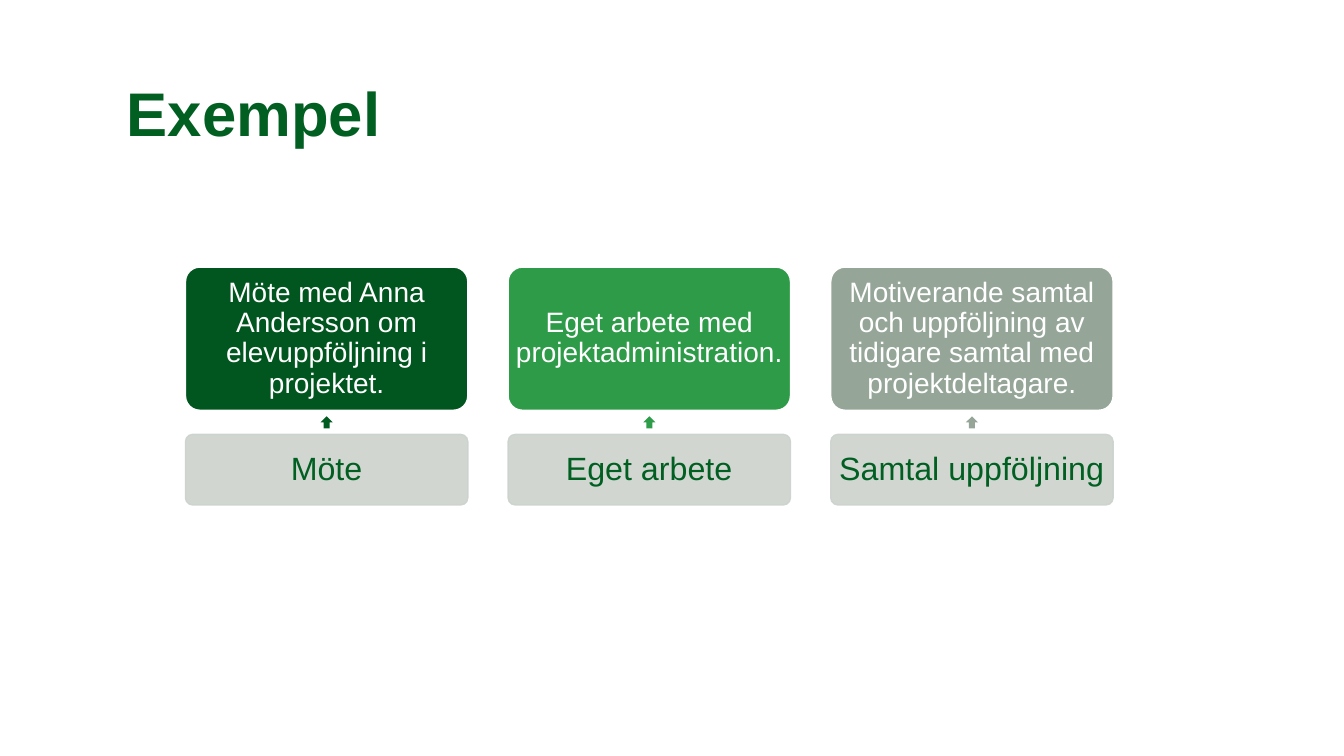
"""Build the slide "Exempel" with three activities and their categories."""
import pptx
import pptx.dml.color
import pptx.enum.shapes
import pptx.enum.text
import pptx.oxml
import pptx.oxml.ns
import pptx.util

Inches = pptx.util.Inches
Pt = pptx.util.Pt
RGBColor = pptx.dml.color.RGBColor
MSO_SHAPE = pptx.enum.shapes.MSO_SHAPE
PP_ALIGN = pptx.enum.text.PP_ALIGN
MSO_ANCHOR = pptx.enum.text.MSO_ANCHOR

GREEN = RGBColor(0x00, 0x5F, 0x21)
DARK_GREEN = RGBColor(0x00, 0x56, 0x1E)
ARROW_DARK = RGBColor(0x00, 0x5B, 0x20)
MID_GREEN = RGBColor(0x2E, 0x9B, 0x49)
ARROW_MID = RGBColor(0x2E, 0x9D, 0x4A)
GREY_GREEN = RGBColor(0x95, 0xA6, 0x98)
PALE = RGBColor(0xCC, 0xD2, 0xCD)
WHITE = RGBColor(0xFF, 0xFF, 0xFF)

HEADING = "Exempel"
ACTIVITIES = [
    ("Möte med Anna Andersson om elevuppföljning i projektet.", "Möte",
     DARK_GREEN, ARROW_DARK),
    ("Eget arbete med projektadministration.", "Eget arbete",
     MID_GREEN, ARROW_MID),
    ("Motiverande samtal och uppföljning av tidigare samtal med projektdeltagare.",
     "Samtal uppföljning", GREY_GREEN, GREY_GREEN),
]

FIRST_LEFT, PITCH, CARD_WIDTH = 1.84, 3.2, 2.8
DESCRIPTION_TOP, DESCRIPTION_HEIGHT = 2.65, 1.42
ARROW_TOP, ARROW_SIZE = 4.13, 0.12
CATEGORY_TOP, CATEGORY_HEIGHT = 4.31, 0.7
INSET = 0.03
OPACITY = 90


def write(frame, text, size, color, bold=False):
    frame.word_wrap = True
    paragraph = frame.paragraphs[0]
    paragraph.text = text
    paragraph.line_spacing = 0.9
    font = paragraph.font
    font.name, font.size, font.bold = "Arial", Pt(size), bold
    font.color.rgb = color
    return paragraph


def add_filled(slide, kind, left, top, width, height, color):
    shape = slide.shapes.add_shape(
        kind, Inches(left), Inches(top), Inches(width), Inches(height))
    shape.shadow.inherit = False
    shape.fill.solid()
    shape.fill.fore_color.rgb = color
    shape.line.fill.background()
    return shape


def add_card(slide, left, top, height, fill, border, text, size, color):
    card = add_filled(slide, MSO_SHAPE.ROUNDED_RECTANGLE,
                      left, top, CARD_WIDTH, height, fill)
    card.adjustments[0] = 0.1
    card.line.color.rgb = border
    card.line.width = Pt(1)
    frame = card.text_frame
    frame.margin_left = frame.margin_right = Inches(INSET)
    frame.margin_top = frame.margin_bottom = Inches(INSET)
    frame.vertical_anchor = MSO_ANCHOR.MIDDLE
    write(frame, text, size, color).alignment = PP_ALIGN.CENTER
    return card


def make_translucent(card):
    for color in card._element.spPr.iter(pptx.oxml.ns.qn("a:srgbClr")):
        alpha = pptx.oxml.parse_xml(
            f'<a:alpha {pptx.oxml.ns.nsdecls("a")} val="{OPACITY * 1000}"/>')
        color.append(alpha)


def main():
    deck = pptx.Presentation()
    deck.slide_width, deck.slide_height = Inches(13.33), Inches(7.5)
    slide = deck.slides.add_slide(deck.slide_layouts[6])

    heading = slide.shapes.add_textbox(
        Inches(1.16), Inches(0.78), Inches(11.02), Inches(1.45))
    write(heading.text_frame, HEADING, 44, GREEN, bold=True)

    for column, (description, category, fill, arrow_fill) in enumerate(ACTIVITIES):
        left = FIRST_LEFT + column * PITCH
        add_card(slide, left, DESCRIPTION_TOP, DESCRIPTION_HEIGHT,
                 fill, WHITE, description, 20, WHITE)
        arrow = add_filled(slide, MSO_SHAPE.LEFT_ARROW,
                           left + (CARD_WIDTH - ARROW_SIZE) / 2, ARROW_TOP,
                           ARROW_SIZE, ARROW_SIZE, arrow_fill)
        arrow.rotation = 90
        make_translucent(add_card(slide, left, CATEGORY_TOP, CATEGORY_HEIGHT,
                                  PALE, PALE, category, 23, GREEN))

    deck.save("out.pptx")


if __name__ == "__main__":
    main()
